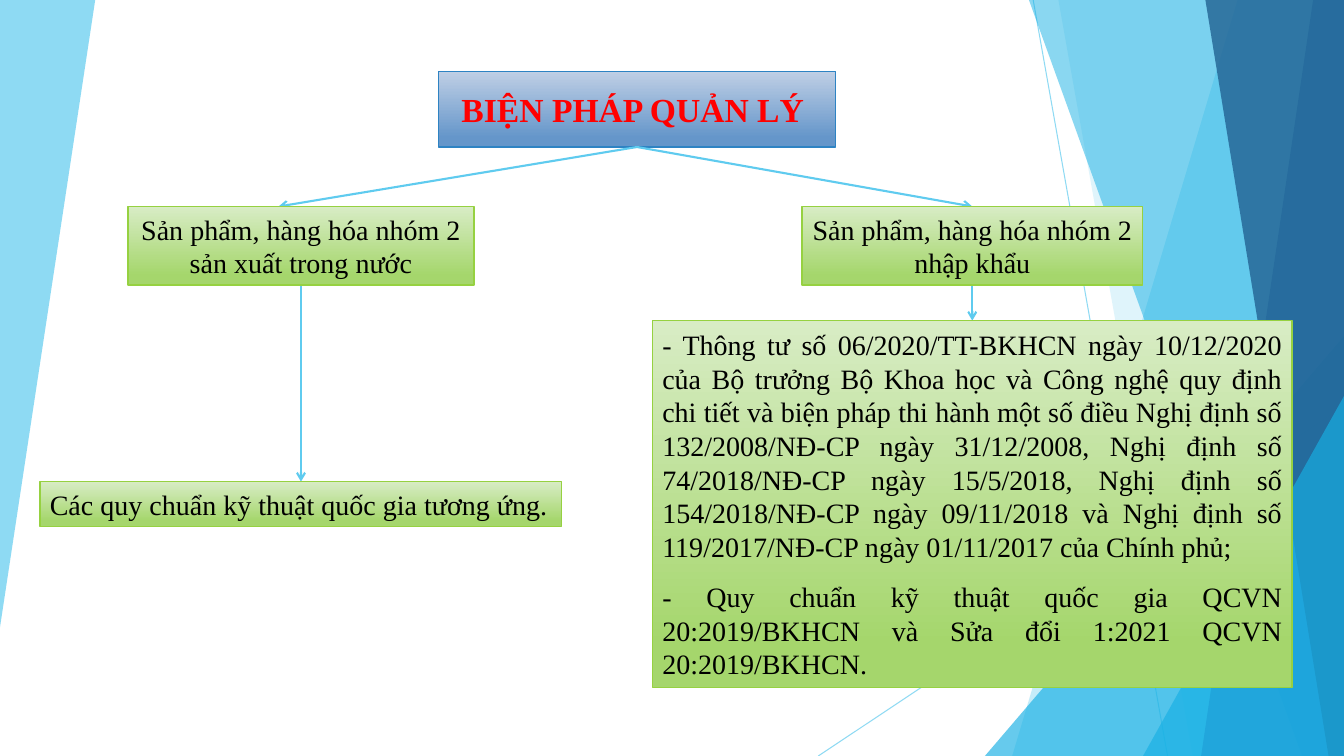
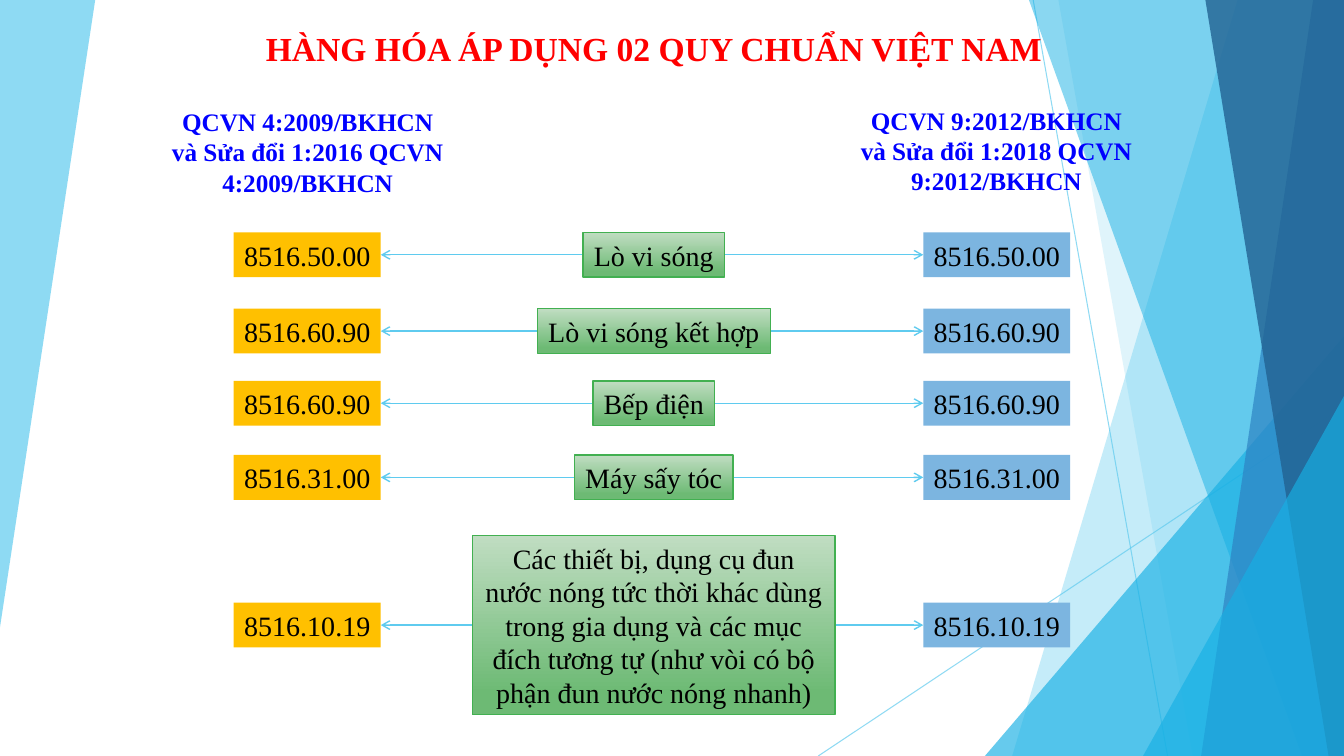
from lxml.etree import SubElement
from pptx import Presentation
from pptx.dml.color import RGBColor
from pptx.enum.dml import MSO_FILL
from pptx.enum.shapes import MSO_CONNECTOR, MSO_SHAPE, PP_PLACEHOLDER
from pptx.enum.text import MSO_ANCHOR, MSO_AUTO_SIZE, PP_ALIGN
from pptx.oxml import parse_xml
from pptx.oxml.ns import nsdecls, qn
from pptx.util import Pt

FONT = "Times New Roman"
SKY, CYAN, BLUE, NAVY = "5FCBEF", "17B0E4", "2E83C3", "226292"
RED, HEADING_BLUE, BLACK = "FF0000", "0000FF", "000000"
TITLE_FILL = ("BFCFE5", "6596CA")
LIME_FILL, LIME_EDGE = ("D8ECC5", "A5D66C"), "96D141"
GREEN_FILL, GREEN_EDGE = ("C0DDC2", "6DBA74"), "42B051"
AMBER_FILL, PALE_BLUE_FILL = ("FFC000",), ("7CB5E0",)
WIDTH, HEIGHT = 960, 540


def paint(shape, *colors, outline=None, width=1, alpha=100):
    """Give a solid or two-colour fill, an outline, an opacity and no shadow."""
    if len(colors) == 2:
        shape.fill.gradient()
        shape.fill.gradient_angle = 270
        for stop, color, position in zip(shape.fill.gradient_stops, colors, (0, 0.88)):
            stop.color.rgb = RGBColor.from_string(color)
            stop.position = position
    elif colors:
        shape.fill.solid()
        shape.fill.fore_color.rgb = RGBColor.from_string(colors[0])
    if outline:
        shape.line.color.rgb = RGBColor.from_string(outline)
        shape.line.width = Pt(width)
    else:
        shape.line.fill.background()
    properties = shape.element.spPr
    if alpha < 100:
        for color in properties.iter(qn("a:srgbClr")):
            SubElement(color, qn("a:alpha"), val=str(alpha * 1000))
    SubElement(properties, qn("a:effectLst"))


def connect(slide, start, end, width, alpha=100, arrow=True):
    connector = slide.shapes.add_connector(
        MSO_CONNECTOR.STRAIGHT, *(Pt(v) for v in (*start, *end)))
    paint(connector, outline=SKY, width=width, alpha=alpha)
    if arrow:
        SubElement(connector.element.spPr.find(qn("a:ln")), qn("a:tailEnd"), type="arrow")


prs = Presentation()
prs.slide_width, prs.slide_height = Pt(WIDTH), Pt(HEIGHT)
layout = prs.slide_layouts[5]
for placeholder in list(layout.placeholders):
    if placeholder.placeholder_format.type != PP_PLACEHOLDER.TITLE:
        placeholder.element.getparent().remove(placeholder.element)
measures = prs.slides.add_slide(layout)
goods = prs.slides.add_slide(layout)

# Faceted background, drawn once and moved to the shared layout
outline = measures.shapes.build_freeform(0, 0, scale=Pt(1))
outline.add_line_segments([(68, 0), (0, 448)])
paint(outline.convert_to_shape(), SKY, alpha=70)
connect(measures, (738, 0), (834, HEIGHT), 0.75, alpha=70, arrow=False)
connect(measures, (WIDTH, 290), (584.5, HEIGHT), 0.75, alpha=70, arrow=False)
facets = [  # top x, bottom x, top y, colour, opacity
    (884, 723, 0, SKY, 36),
    (756, 852, 0, SKY, 20),
    (WIDTH, 703.5, 240, CYAN, 66),
    (735, 929.5, 0, CYAN, 50),
    (938, 858, 0, BLUE, 70),
    (861, 949, 0, NAVY, 80),
    (WIDTH, 816.5, 283, CYAN, 66),
]
for top_x, bottom_x, top_y, color, alpha in facets:
    if top_x == WIDTH:
        facet = measures.shapes.add_shape(
            MSO_SHAPE.ISOSCELES_TRIANGLE, Pt(bottom_x), Pt(top_y),
            Pt(WIDTH - bottom_x), Pt(HEIGHT - top_y))
        facet.adjustments[0] = 1
    else:
        outline = measures.shapes.build_freeform(top_x, top_y, scale=Pt(1))
        outline.add_line_segments([(WIDTH, top_y), (WIDTH, HEIGHT), (bottom_x, HEIGHT)])
        facet = outline.convert_to_shape()
    paint(facet, color, alpha=alpha)
for decoration in list(measures.shapes):
    if not decoration.is_placeholder:
        layout.shapes.element.append(decoration.element)

# Titles
titles = [
    (measures, "BIỆN PHÁP QUẢN LÝ ", (313, 51, 284, 54)),
    (goods, "HÀNG HÓA ÁP DỤNG 02 QUY CHUẨN VIỆT NAM", (178.5, 16.5, 577, 36)),
]
for slide, wording, area in titles:
    title = slide.shapes.title
    title.left, title.top, title.width, title.height = (Pt(v) for v in area)
    title.text_frame.text = wording
    title.text_frame.auto_size = MSO_AUTO_SIZE.NONE
    title.text_frame.vertical_anchor = MSO_ANCHOR.MIDDLE
    paragraph = title.text_frame.paragraphs[0]
    paragraph.alignment = PP_ALIGN.CENTER
    paragraph.font.name, paragraph.font.size, paragraph.font.bold = FONT, Pt(24), True
    paragraph.font.color.rgb = RGBColor.from_string(RED)
banner = measures.shapes.title
banner.element.spPr.insert(1, parse_xml(
    f'<a:prstGeom {nsdecls("a")} prst="roundRect"><a:avLst/></a:prstGeom>'))
paint(banner, *TITLE_FILL, outline=BLUE)

# Boxes: slide, area, lines, fill, outline, alignment, wrap
boxes = [
    (measures, (91.5, 147.5, 247, 56),
     ["Sản phẩm, hàng hóa nhóm 2", "sản xuất trong nước"],
     LIME_FILL, LIME_EDGE, PP_ALIGN.CENTER, False),
    (measures, (573, 147.5, 243, 56),
     ["Sản phẩm, hàng hóa nhóm 2", "nhập khẩu"],
     LIME_FILL, LIME_EDGE, PP_ALIGN.CENTER, False),
    (measures, (28.5, 344, 372.5, 32),
     ["Các quy chuẩn kỹ thuật quốc gia tương ứng."],
     LIME_FILL, LIME_EDGE, PP_ALIGN.LEFT, True),
    (measures, (466, 229, 457, 262),
     ["- Thông tư số 06/2020/TT-BKHCN ngày 10/12/2020 của Bộ trưởng Bộ Khoa học "
      "và Công nghệ quy định chi tiết và biện pháp thi hành một số điều Nghị định "
      "số 132/2008/NĐ-CP ngày 31/12/2008, Nghị định số 74/2018/NĐ-CP ngày "
      "15/5/2018, Nghị định số 154/2018/NĐ-CP ngày 09/11/2018 và Nghị định số "
      "119/2017/NĐ-CP ngày 01/11/2017 của Chính phủ;",
      "- Quy chuẩn kỹ thuật quốc gia QCVN 20:2019/BKHCN và Sửa đổi 1:2021 QCVN "
      "20:2019/BKHCN."],
     LIME_FILL, LIME_EDGE, PP_ALIGN.JUSTIFY, True),
]
for start, end in [((455, 105), (199, 147.5)), ((455, 105), (694.5, 147.5)),
                   ((694.5, 203.5), (694.5, 229)), ((215, 203.5), (215, 344))]:
    connect(measures, start, end, 1.5)

# Goods in the middle, their codes on both sides
products = [  # name, code, middle y, width, height
    ("Lò vi sóng", "8516.50.00", 182, 101, 32),
    ("Lò vi sóng kết hợp", "8516.60.90", 236.5, 166.5, 32),
    ("Bếp điện", "8516.60.90", 288, 87, 32),
    ("Máy sấy tóc", "8516.31.00", 341, 113, 32),
    ("Các thiết bị, dụng cụ đun nước nóng tức thời khác dùng trong gia dụng và các "
     "mục đích tương tự (như vòi có bộ phận đun nước nóng nhanh)",
     "8516.10.19", 446.5, 259, 128),
]
name_center, code_width, code_height = 467, 105, 32
left_code, right_code = 167, 659.5
for name, code, middle, width, height in products:
    name_left = name_center - width / 2
    boxes.append((goods, (name_left, middle - height / 2, width, height), [name],
                  GREEN_FILL, GREEN_EDGE, PP_ALIGN.CENTER, height > code_height))
    for code_left, fill in ((left_code, AMBER_FILL), (right_code, PALE_BLUE_FILL)):
        boxes.append((goods, (code_left, middle - code_height / 2, code_width, code_height),
                      [code], fill, None, PP_ALIGN.CENTER, False))
    connect(goods, (name_left + width, middle), (right_code, middle), 1)
    connect(goods, (name_left, middle), (left_code + code_width, middle), 1)

for slide, area, lines, fill, edge, alignment, wrap in boxes:
    box = slide.shapes.add_shape(MSO_SHAPE.RECTANGLE, *(Pt(v) for v in area))
    paint(box, *fill, outline=edge)
    box.text_frame.text = "\n".join(lines)
    box.text_frame.word_wrap = wrap
    box.text_frame.vertical_anchor = MSO_ANCHOR.MIDDLE
    for paragraph in box.text_frame.paragraphs:
        paragraph.alignment = alignment
        paragraph.font.name, paragraph.font.size = FONT, Pt(20)
        paragraph.font.color.rgb = RGBColor.from_string(BLACK)
    if alignment == PP_ALIGN.JUSTIFY:
        box.text_frame.paragraphs[0].space_after = Pt(12)

# Standards heading the two code columns
standards = [
    ((114, 72.5, 211.5, 73), ["QCVN 4:2009/BKHCN và Sửa đổi 1:2016 QCVN 4:2009/BKHCN"]),
    ((602, 71.5, 219.5, 73), ["QCVN 9:2012/BKHCN", "và Sửa đổi 1:2018 QCVN 9:2012/BKHCN"]),
]
for area, lines in standards:
    heading = goods.shapes.add_textbox(*(Pt(v) for v in area))
    heading.text_frame.text = "\n".join(lines)
    heading.text_frame.word_wrap = True
    for paragraph in heading.text_frame.paragraphs:
        paragraph.alignment = PP_ALIGN.CENTER
        paragraph.font.name, paragraph.font.size, paragraph.font.bold = FONT, Pt(18), True
        paragraph.font.color.rgb = RGBColor.from_string(HEADING_BLUE)

prs.save("out.pptx")
